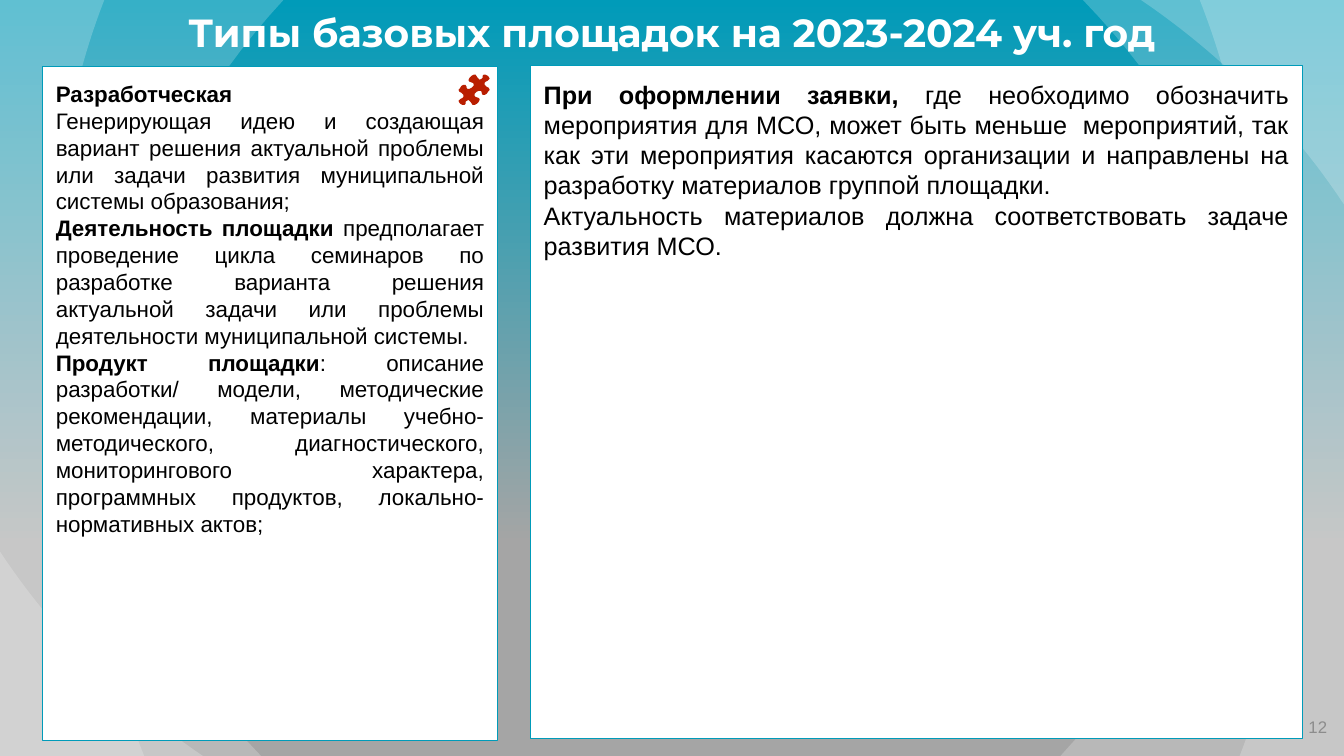
from lxml import etree
from pptx import Presentation
from pptx.dml.color import RGBColor
from pptx.enum.shapes import MSO_SHAPE
from pptx.enum.text import MSO_ANCHOR, PP_ALIGN
from pptx.oxml.ns import qn
from pptx.util import Pt

RECTANGLE = MSO_SHAPE.RECTANGLE
TOP, MIDDLE = MSO_ANCHOR.TOP, MSO_ANCHOR.MIDDLE
CENTER, RIGHT, JUSTIFY = PP_ALIGN.CENTER, PP_ALIGN.RIGHT, PP_ALIGN.JUSTIFY

WIDTH, HEIGHT = 960, 540
TEAL, GREY, WHITE, BLACK = "009BB9", "A5A5A5", "FFFFFF", "000000"
RED, NUMBER_GREY = "B91E00", "8C8C8C"
CURVE_STEPS = 24

TITLE = "Типы базовых площадок на 2023-2024 уч. год"
TYPE_TEXT = [
    [("Разработческая", True)],
    [("Генерирующая идею и создающая вариант решения актуальной проблемы "
      "или задачи развития муниципальной системы образования;", False)],
    [("Деятельность площадки ", True),
     ("предполагает проведение цикла семинаров по разработке варианта решения "
      "актуальной задачи или проблемы деятельности муниципальной системы.", False)],
    [("Продукт площадки", True),
     (": описание разработки/ модели, методические рекомендации, материалы "
      "учебно-методического, диагностического, мониторингового характера, "
      "программных продуктов, локально-нормативных актов;", False)],
]
REQUEST_TEXT = [
    [("При оформлении заявки, ", True),
     ("где необходимо обозначить мероприятия для МСО, может быть меньше  мероприятий, "
      "так как эти мероприятия касаются организации и направлены на разработку "
      "материалов группой площадки.", False)],
    [("Актуальность материалов должна соответствовать задаче развития МСО.", False)],
]

RIGHT_EDGE_BANDS = [
    ([[(857, 0), (881, 61), (894, 126), (893.5, 192)],
      [(893.5, 192), (893.5, 326), (842, 449), (757.5, 540)]],
     [(960, 540), (960, 0)]),
    ([[(773.5, 0), (863, 92), (919.5, 219), (919.5, 358)],
      [(919.5, 358), (919.5, 420.5), (908, 482), (885.5, 540)]],
     [(960, 540), (960, 0)]),
    ([[(815, 0), (872.5, 39), (922, 88.5), (960, 146)]], [(960, 0)]),
]
PUZZLE_SPAN = (31, 30)
PUZZLE_HALF = [
    (15, 0), (13, 1), (11, 3), (10, 5), (10, 6), (11, 7), (14, 8), (15, 9),
    (15, 11), (14, 12), (13, 13), (11, 14), (9, 14), (8, 13), (8, 12), (7, 10),
    (5, 10), (3, 11), (1, 14), (0, 15), (1, 17), (3, 18), (5, 20), (5, 22),
    (4, 23), (2, 24), (1, 25), (0, 26), (1, 28), (2, 29), (4, 30), (6, 30),
    (7, 29), (7, 27), (8, 26), (10, 25), (12, 27), (14, 30), (15, 30),
]


def color(hex_text):
    return RGBColor.from_string(hex_text)


def set_values(target, values):
    for name, value in values.items():
        setattr(target, name, value)


def half_turn(points, width, height):
    return [(width - x, height - y) for x, y in points]


def curve_points(curve):
    points = []
    for step in range(CURVE_STEPS + 1):
        t = step / CURVE_STEPS
        weights = ((1 - t) ** 3, 3 * t * (1 - t) ** 2, 3 * t * t * (1 - t), t ** 3)
        points.append(tuple(sum(w * p[axis] for w, p in zip(weights, curve))
                            for axis in (0, 1)))
    return points


def add_outline(page, points, fill, opacity=100):
    corners = [(Pt(x), Pt(y)) for x, y in points]
    builder = page.shapes.build_freeform(*corners[0])
    builder.add_line_segments(corners[1:], close=True)
    shape = builder.convert_to_shape()
    shape.shadow.inherit = False
    shape.line.fill.background()
    shape.fill.solid()
    shape.fill.fore_color.rgb = color(fill)
    if opacity < 100:
        tint = shape.fill._xPr.find(qn("a:solidFill"))[0]
        etree.SubElement(tint, qn("a:alpha")).set("val", str(opacity * 1000))


def write_text(shape, paragraphs, font, ink, align, anchor=MIDDLE, inset=0, spacing=1.0):
    frame = shape.text_frame
    margins = {f"margin_{side}": Pt(inset) for side in ("left", "top", "right", "bottom")}
    set_values(frame, {"word_wrap": True, "vertical_anchor": anchor, **margins})
    for index, spans in enumerate(paragraphs):
        para = frame.add_paragraph() if index else frame.paragraphs[0]
        set_values(para, {"alignment": align, "line_spacing": spacing})
        for text, bold in spans:
            span = para.add_run()
            span.text = text
            set_values(span.font, {**font, "bold": bold})
            span.font.color.rgb = color(ink)


def add_backdrop(page, width, height):
    fill = page.background.fill
    fill.gradient()
    fill.gradient_angle = 270
    for stop, (position, tint) in zip(fill.gradient_stops, [(0, TEAL), (0.72, GREY)]):
        stop.position = position
        stop.color.rgb = color(tint)
    bands = [[p for curve in curves for p in curve_points(curve)] + corners
             for curves, corners in RIGHT_EDGE_BANDS]
    for band in bands + [half_turn(band, width, height) for band in bands]:
        add_outline(page, band, WHITE, opacity=21)


def add_label(page, box, text, font, ink, align, bold=False, spacing=1.0):
    label = page.shapes.add_textbox(*map(Pt, box))
    write_text(label, [[(text, bold)]], font, ink, align, spacing=spacing)


def add_panel(page, box, paragraphs, size):
    panel = page.shapes.add_shape(RECTANGLE, *map(Pt, box))
    panel.shadow.inherit = False
    panel.fill.solid()
    panel.fill.fore_color.rgb = color(WHITE)
    panel.line.color.rgb = color(TEAL)
    panel.line.width = Pt(0.75)
    write_text(panel, paragraphs, {"name": "Arial", "size": Pt(size)}, BLACK,
               JUSTIFY, anchor=TOP, inset=9.6)


def add_puzzle(page, box):
    left, top, width, height = box
    columns, rows = PUZZLE_SPAN
    outline = PUZZLE_HALF + half_turn(PUZZLE_HALF, columns, rows)
    add_outline(page, [(left + x * width / columns, top + y * height / rows)
                       for x, y in outline], RED)


def add_type_panel(page, box):
    left, top, width, height = box
    add_panel(page, box, TYPE_TEXT, 16)
    add_puzzle(page, (left + width - 28, top + 5.8, 22.3, 21.6))


def main():
    deck = Presentation()
    set_values(deck, {"slide_width": Pt(WIDTH), "slide_height": Pt(HEIGHT)})
    page = deck.slides.add_slide(deck.slide_layouts[6])
    add_backdrop(page, WIDTH, HEIGHT)
    add_label(page, (27.5, 0, 905, 49), TITLE, {"name": "Montserrat", "size": Pt(28)},
              WHITE, CENTER, bold=True, spacing=0.9)
    add_label(page, (890.5, 499, 57.5, 41), "12", {"name": "Arial", "size": Pt(12)},
              NUMBER_GREY, RIGHT)
    add_type_panel(page, (30.3, 47.6, 325.2, 481.5))
    add_panel(page, (378.8, 46.8, 551.5, 480.5), REQUEST_TEXT, 18)
    deck.save("out.pptx")


if __name__ == "__main__":
    main()
